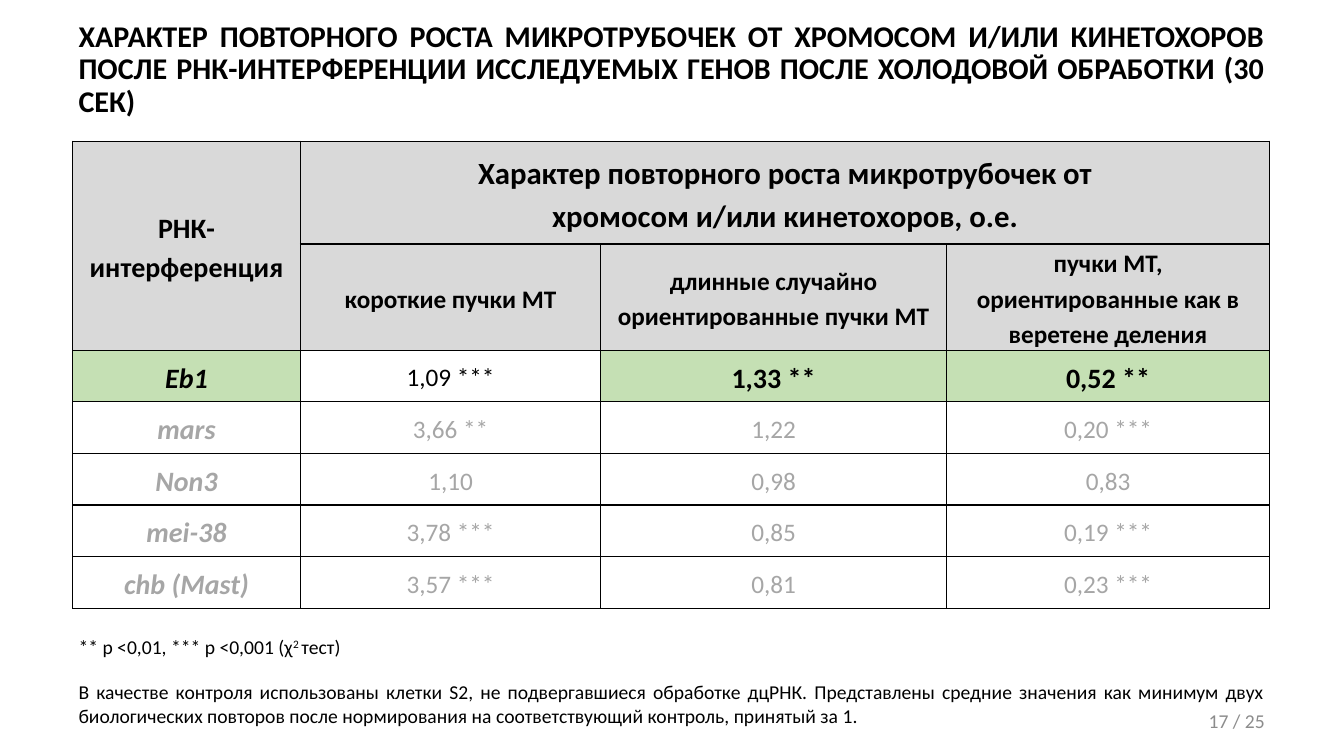
from dataclasses import dataclass

from lxml.etree import SubElement
from pptx import Presentation
from pptx.dml.color import RGBColor
from pptx.enum.text import MSO_ANCHOR as Anchor, MSO_AUTO_SIZE as AutoSize, PP_ALIGN as Align
from pptx.oxml.ns import qn
from pptx.slide import Slide
from pptx.table import _Cell as Cell
from pptx.text.text import _Paragraph as Paragraph
from pptx.util import Cm, Pt


@dataclass(frozen=True)
class Theme:
    font: str = "Calibri"
    black: str = "000000"
    white: str = "FFFFFF"
    muted: str = "A6A6A6"
    page_number: str = "8C8C8C"
    header: str = "D9D9D9"
    highlight: str = "C5E0B4"
    title_size: float = 21.5
    top_header_size: float = 22
    strong_size: float = 20
    cell_size: float = 18
    note_size: float = 14


THEME = Theme()


@dataclass(frozen=True)
class Span:
    text: str
    size: float
    color: str = THEME.black
    bold: bool = False
    italic: bool = False
    superscript: bool = False


@dataclass(frozen=True)
class TextBox:
    left: float
    top: float
    width: float
    height: float
    spans: tuple[Span, ...]
    align: Align = Align.LEFT
    anchor: Anchor = Anchor.TOP
    line_spacing: float = 1.0
    grows: bool = False


@dataclass(frozen=True)
class TableCell:
    row: int
    column: int
    span: Span
    fill: str
    rows: int = 1
    columns: int = 1


@dataclass(frozen=True)
class GeneResult:
    gene: str
    values: tuple[str, str, str]
    highlighted: tuple[int, ...] = ()


COLUMN_WIDTHS = (5.74, 7.57, 8.71, 8.15)
HEADER_HEIGHT, ROW_HEIGHT = 2.59, 1.3
HEADER_ROWS = 2
TABLE_LEFT, TABLE_TOP = 1.83, 3.56

RESULTS = (
    GeneResult("Eb1", ("1,09 ***", "1,33 **", "0,52 **"), highlighted=(0, 2, 3)),
    GeneResult("mars", ("3,66 **", "1,22", "0,20 ***")),
    GeneResult("Non3", ("1,10", "0,98", "0,83")),
    GeneResult("mei-38", ("3,78 ***", "0,85", "0,19 ***")),
    GeneResult("chb (Mast)", ("3,57 ***", "0,81", "0,23 ***")),
)

TITLE = TextBox(
    1.73, 0.76, 30.4, 2.01,
    (Span("ХАРАКТЕР ПОВТОРНОГО РОСТА МИКРОТРУБОЧЕК ОТ ХРОМОСОМ И/ИЛИ КИНЕТОХОРОВ "
          "ПОСЛЕ РНК-ИНТЕРФЕРЕНЦИИ ИССЛЕДУЕМЫХ ГЕНОВ ПОСЛЕ ХОЛОДОВОЙ ОБРАБОТКИ (30 СЕК)",
          THEME.title_size, bold=True),),
    Align.JUSTIFY, Anchor.MIDDLE, 0.9)
SIGNIFICANCE = TextBox(
    1.73, 15.88, 12.7, 0.86,
    (Span("** p <0,01, *** p <0,001 (χ", THEME.note_size),
     Span("2 ", THEME.note_size, superscript=True),
     Span("тест)", THEME.note_size)),
    grows=True)
CONTROL_NOTE = TextBox(
    1.73, 17.02, 30.4, 1.45,
    (Span("В качестве контроля использованы клетки S2, не подвергавшиеся обработке дцРНК. "
          "Представлены средние значения как минимум двух биологических повторов после "
          "нормирования на соответствующий контроль, принятый за 1.", THEME.note_size),),
    Align.JUSTIFY, grows=True)
PAGE_NUMBER = TextBox(
    24.51, 17.65, 7.62, 1.02,
    (Span("17 / 25", THEME.note_size, THEME.page_number),),
    Align.RIGHT, Anchor.MIDDLE)


def add_span(para: Paragraph, span: Span) -> None:
    for index, line in enumerate(span.text.split("\n")):
        if index:
            para.add_line_break()
        run = para.add_run()
        run.text = line
        font = run.font
        font.name, font.size = THEME.font, Pt(span.size)
        font.bold, font.italic = span.bold, span.italic
        font.color.rgb = RGBColor.from_string(span.color)
        if span.superscript:
            run._r.get_or_add_rPr().set("baseline", "30000")


def add_text_box(page: Slide, item: TextBox) -> None:
    box = page.shapes.add_textbox(Cm(item.left), Cm(item.top), Cm(item.width), Cm(item.height))
    frame = box.text_frame
    frame.word_wrap = True
    frame.auto_size = AutoSize.SHAPE_TO_FIT_TEXT if item.grows else AutoSize.NONE
    frame.vertical_anchor = item.anchor
    para = frame.paragraphs[0]
    para.alignment, para.line_spacing = item.align, item.line_spacing
    for span in item.spans:
        add_span(para, span)


def style_cell(cell: Cell, fill: str) -> None:
    properties = cell._tc.get_or_add_tcPr()
    for side in ("a:lnL", "a:lnR", "a:lnT", "a:lnB"):
        line = SubElement(properties, qn(side), w=str(Pt(1)))
        SubElement(SubElement(line, qn("a:solidFill")), qn("a:srgbClr"), val=THEME.black)
    cell.fill.solid()
    cell.fill.fore_color.rgb = RGBColor.from_string(fill)
    cell.margin_left = cell.margin_right = Cm(0.18)
    cell.margin_top = cell.margin_bottom = Cm(0)
    cell.vertical_anchor = Anchor.MIDDLE


def header_cells() -> list[TableCell]:
    top = "Характер повторного роста микротрубочек от\nхромосом и/или кинетохоров, о.е."
    bundles = ("короткие пучки МТ", "длинные случайно ориентированные пучки МТ",
               "пучки МТ, ориентированные как в веретене деления")
    return [
        TableCell(0, 0, Span("РНК-\nинтерференция", THEME.strong_size, bold=True),
                  THEME.header, rows=2),
        TableCell(0, 1, Span(top, THEME.top_header_size, bold=True), THEME.header, columns=3),
        *(TableCell(1, column, Span(text, THEME.cell_size, bold=True), THEME.header)
          for column, text in enumerate(bundles, 1)),
    ]


def result_cells(row: int, result: GeneResult) -> list[TableCell]:
    color = THEME.black if result.highlighted else THEME.muted
    cells = []
    for column, text in enumerate((result.gene, *result.values)):
        marked = column in result.highlighted
        strong = marked or column == 0
        size = THEME.strong_size if strong else THEME.cell_size
        span = Span(text, size, color, bold=strong, italic=column == 0)
        cells.append(TableCell(row, column, span, THEME.highlight if marked else THEME.white))
    return cells


def add_results_table(page: Slide) -> None:
    heights = [HEADER_HEIGHT] * HEADER_ROWS + [ROW_HEIGHT] * len(RESULTS)
    table = page.shapes.add_table(
        len(heights), len(COLUMN_WIDTHS), Cm(TABLE_LEFT), Cm(TABLE_TOP),
        Cm(sum(COLUMN_WIDTHS)), Cm(sum(heights))).table
    table.first_row = table.horz_banding = False
    for column, width in zip(table.columns, COLUMN_WIDTHS):
        column.width = Cm(width)
    for row, height in zip(table.rows, heights):
        row.height = Cm(height)

    items = header_cells()
    for index, result in enumerate(RESULTS, HEADER_ROWS):
        items += result_cells(index, result)
    for item in items:
        for row in range(item.row, item.row + item.rows):
            for column in range(item.column, item.column + item.columns):
                style_cell(table.cell(row, column), item.fill)
        cell = table.cell(item.row, item.column)
        if item.rows * item.columns > 1:
            cell.merge(table.cell(item.row + item.rows - 1, item.column + item.columns - 1))
        para = cell.text_frame.paragraphs[0]
        para.alignment, para.line_spacing, para.space_after = Align.CENTER, 1.15, Pt(10)
        add_span(para, item.span)


def main() -> None:
    deck = Presentation()
    deck.slide_width, deck.slide_height = Cm(33.87), Cm(19.05)
    page = deck.slides.add_slide(deck.slide_layouts[6])

    # Title, table, then notes and page number
    add_text_box(page, TITLE)
    add_results_table(page)
    for item in (SIGNIFICANCE, CONTROL_NOTE, PAGE_NUMBER):
        add_text_box(page, item)
    deck.save("out.pptx")


if __name__ == "__main__":
    main()
